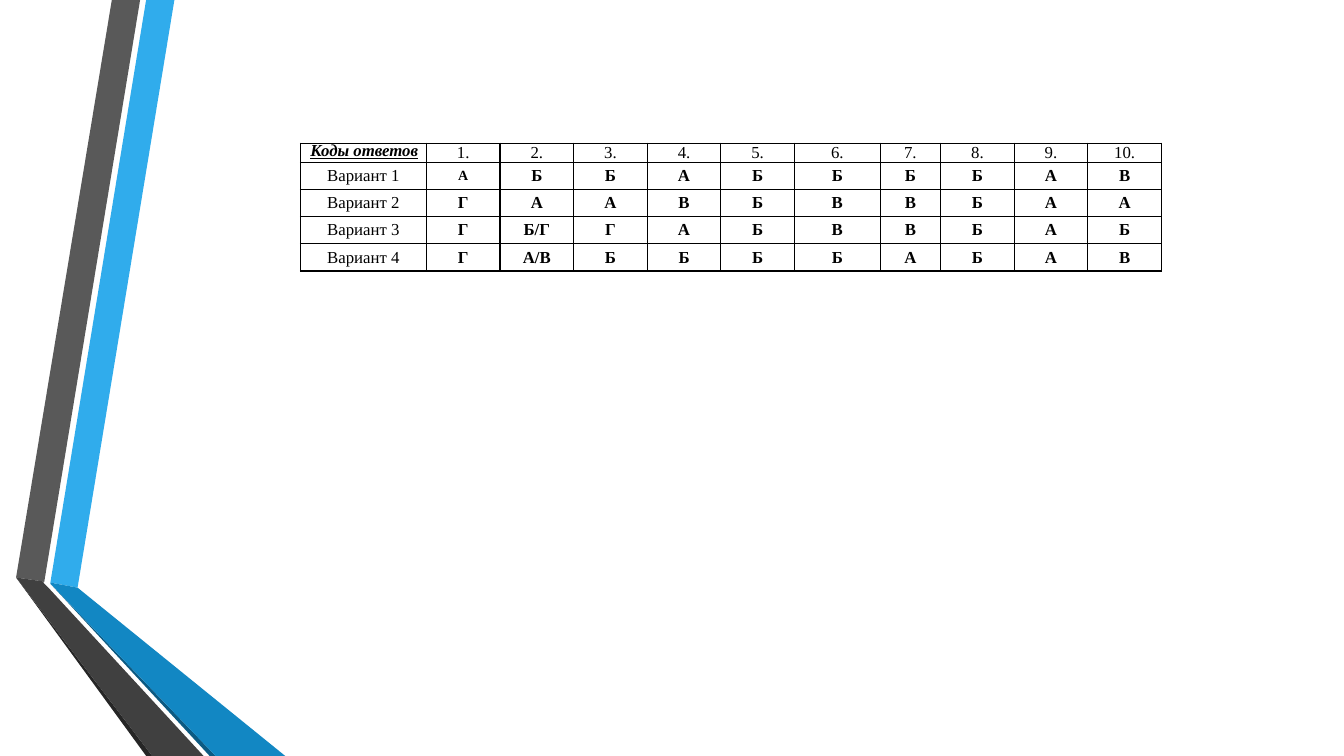
from pptx import Presentation
from pptx.dml.color import RGBColor
from pptx.enum.text import MSO_ANCHOR as Anchor, PP_ALIGN as Align
from pptx.oxml import parse_xml
from pptx.oxml.ns import nsdecls
from pptx.util import Inches, Pt

BLACK = RGBColor(0x00, 0x00, 0x00)
SKY = RGBColor(0x30, 0xAC, 0xEC)
BLUE = RGBColor(0x12, 0x87, 0xC3)
NAVY = RGBColor(0x0C, 0x5A, 0x82)
GREY = RGBColor(0x59, 0x59, 0x59)
DARK = RGBColor(0x40, 0x40, 0x40)
COAL = RGBColor(0x26, 0x26, 0x26)
FONT = "Times New Roman"


def style(run, **extra):
    run.font.color.rgb = BLACK
    for key, val in {"name": FONT, "size": Pt(12), **extra}.items():
        setattr(run.font, key, val)


deck = Presentation()
deck.slide_width, deck.slide_height = Inches(13.33), Inches(7.5)
slide = deck.slides.add_slide(deck.slide_layouts[6])

# Folded ribbons on the left
ribbons = [
    (SKY, [(0.5, 5.78), (0.77, 5.83), (1.73, 0), (1.45, 0)]),
    (GREY, [(1.39, 0), (1.11, 0), (0.16, 5.73), (0.44, 5.77)]),
    (COAL, [(0.16, 5.73), (1.45, 7.5), (1.51, 7.5)]),
    (NAVY, [(0.5, 5.79), (2.08, 7.5), (2.14, 7.5)]),
    (BLUE, [(0.5, 5.79), (2.14, 7.5), (2.83, 7.5), (0.77, 5.83), (0.5, 5.78)]),
    (DARK, [(2.02, 7.5), (0.48, 5.83), (0.43, 5.78), (0.44, 5.77),
            (0.16, 5.73), (1.51, 7.5)]),
]
for color, points in ribbons:
    first, *rest = [(Inches(x), Inches(y)) for x, y in points]
    pen = slide.shapes.build_freeform(*first)
    pen.add_line_segments(rest, close=True)
    band = pen.convert_to_shape()
    band.shadow.inherit = False
    band.fill.solid()
    band.fill.fore_color.rgb = color
    band.line.fill.background()

# Answer table
answers = ["А Б Б А Б Б Б Б А В", "Г А А В Б В В Б А А",
           "Г Б/Г Г А Б В В Б А Б", "Г А/В Б Б Б Б А Б А В"]
rows = [[""] + [f"{n}." for n in range(1, 11)]]
for n, line in enumerate(answers, 1):
    rows.append([f"Вариант {n}"] + line.split())
widths = [1.25] + [0.73] * 5 + [0.85, 0.6] + [0.73] * 3
heights = [0.19] + [0.27] * 4

frame = slide.shapes.add_table(len(rows), len(widths), Inches(2.98),
                               Inches(1.42), Inches(sum(widths)),
                               Inches(sum(heights)))
table = frame.table
table.first_row = table.horz_banding = False
for col, width in zip(table.columns, widths):
    col.width = Inches(width)
for row, height in zip(table.rows, heights):
    row.height = Inches(height)

layout = {"margin_left": Inches(0.07), "margin_right": Inches(0.07),
          "margin_top": 0, "margin_bottom": 0,
          "vertical_anchor": Anchor.MIDDLE}
for r, texts in enumerate(rows):
    for c, text in enumerate(texts):
        cell = table.cell(r, c)
        for key, val in layout.items():
            setattr(cell, key, val)
        props = cell._tc.get_or_add_tcPr()
        for side in "LRTB":
            props.append(parse_xml(
                f'<a:ln{side} {nsdecls("a")} w="12700"><a:solidFill>'
                f'<a:srgbClr val="{BLACK}"/></a:solidFill></a:ln{side}>'))
        cell.fill.background()
        para = cell.text_frame.paragraphs[0]
        para.alignment = Align.CENTER
        if text:
            run = para.add_run()
            run.text = text
            style(run, bold=r > 0 and c > 0,
                  size=Pt(10 if (r, c) == (1, 1) else 12))
        else:
            # Small end mark keeps the header row low
            para._p.append(parse_xml(
                f'<a:endParaRPr {nsdecls("a")} sz="1000"/>'))

# Corner heading
head = slide.shapes.add_textbox(Inches(2.98), Inches(1.32),
                                Inches(1.46), Inches(0.56))
body = head.text_frame
body.word_wrap = True
body.vertical_anchor = Anchor.TOP
body.margin_top, body.margin_bottom = Inches(0.07), 0
run = body.paragraphs[0].add_run()
run.text = "Коды ответов"
style(run, bold=True, italic=True, underline=True)

deck.save("out.pptx")
